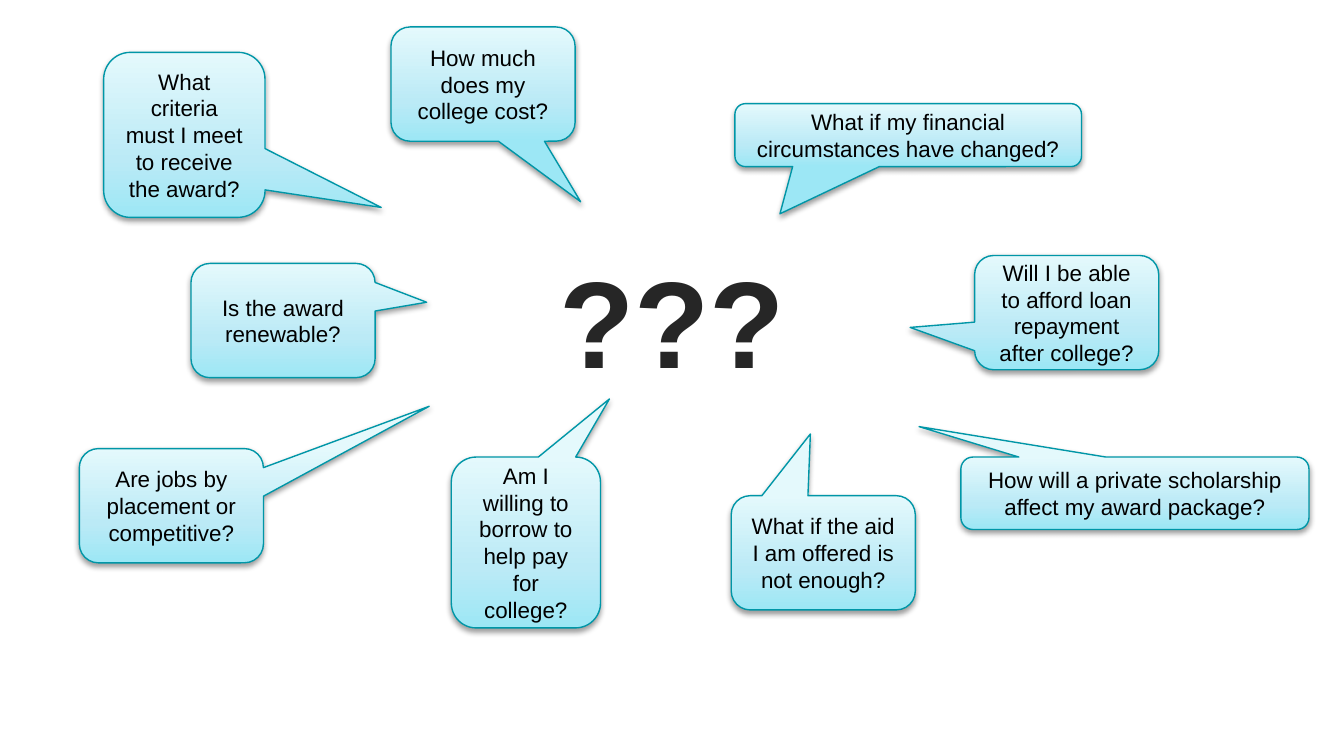
from lxml import etree
from pptx import Presentation
from pptx.dml.color import RGBColor as RGB
from pptx.enum.shapes import MSO_SHAPE as SHAPE
from pptx.enum.text import MSO_ANCHOR as ANCHOR, PP_ALIGN as ALIGN
from pptx.oxml.ns import qn
from pptx.util import Cm, Pt

COLORS = {"deep": "9CE7F5", "mid": "BBEAF6", "pale": "E4F9FC",
          "edge": "0096A7", "text": "000000", "marks": "262626"}
STOPS = [(0, "deep"), (35, "mid"), (100, "pale")]
SHADOW = {"blurRad": Pt(3.1), "dist": Pt(1.6), "dir": 90 * 60000, "rotWithShape": 0}
W, H = 3.48, 2.16

BUBBLES = [
    ("How much does my college cost?", 7.39, 0.51, W, H, 0.53, 1.03),
    ("Are jobs by placement or competitive?", 1.5, 8.48, W, H, 1.4, -0.87),
    ("Is the award renewable?", 3.61, 4.98, W, H, 0.78, -0.16),
    ("What criteria must I meet to receive the award?", 1.96, 0.99, 3.05, 3.12, 1.22, 0.44),
    ("Will I be able to afford loan repayment after college?", 18.42, 4.83, W, H, -0.85, 0.13),
    ("Am I willing to borrow to help pay for college?", 8.53, 8.64, 2.82, 3.23, 0.56, -0.84),
    ("How will a private scholarship affect my award package?", 18.16, 8.64, 6.58, 1.37, -0.62, -0.92),
    ("What if my financial circumstances have changed?", 13.89, 1.96, 6.55, 1.19, -0.37, 1.25),
    ("What if the aid I am offered is not enough?", 13.82, 9.37, W, H, -0.07, -1.04),
]


def add_color(parent, name, **mods):
    clr = etree.SubElement(parent, qn("a:srgbClr"), val=COLORS[name])
    for tag, val in mods.items():
        etree.SubElement(clr, qn(f"a:{tag}"), val=str(val))


def write(sp, text, anchor, color, fmt):
    tf = sp.text_frame
    tf.word_wrap = True
    tf.vertical_anchor = anchor
    p = tf.paragraphs[0]
    p.alignment = ALIGN.CENTER
    r = p.add_run()
    r.text = text
    for key, val in fmt.items():
        setattr(r.font, key, val)
    r.font.color.rgb = RGB.from_string(COLORS[color])


prs = Presentation()
prs.slide_width, prs.slide_height = Cm(25.4), Cm(14.29)
s = prs.slides.add_slide(prs.slide_layouts[6])

for text, x, y, w, h, tip_x, tip_y in BUBBLES:
    sp = s.shapes.add_shape(SHAPE.ROUNDED_RECTANGULAR_CALLOUT, Cm(x), Cm(y), Cm(w), Cm(h))
    sp.adjustments[0], sp.adjustments[1] = tip_x, tip_y
    sp.fill.gradient()
    sp.fill.gradient_angle = 90
    stops = sp._element.spPr.find(".//" + qn("a:gsLst"))
    for old in list(stops):
        stops.remove(old)
    for pos, name in STOPS:
        add_color(etree.SubElement(stops, qn("a:gs"), pos=str(pos * 1000)), name)
    sp.line.color.rgb = RGB.from_string(COLORS["edge"])
    sp.line.width = Pt(0.75)
    sp.shadow.inherit = False
    effects = sp._element.spPr.find(qn("a:effectLst"))
    shadow = etree.SubElement(effects, qn("a:outerShdw"))
    for key, val in SHADOW.items():
        shadow.set(key, str(int(val)))
    add_color(shadow, "text", alpha=38000)
    write(sp, text, ANCHOR.MIDDLE, "text", {"name": "Arial", "size": Pt(12)})

marks = s.shapes.add_textbox(Cm(10.29), Cm(4.52), Cm(4.83), Cm(3.07))
write(marks, "???", ANCHOR.TOP, "marks", {"name": "Arial", "size": Pt(66), "bold": True})

prs.save("out.pptx")
